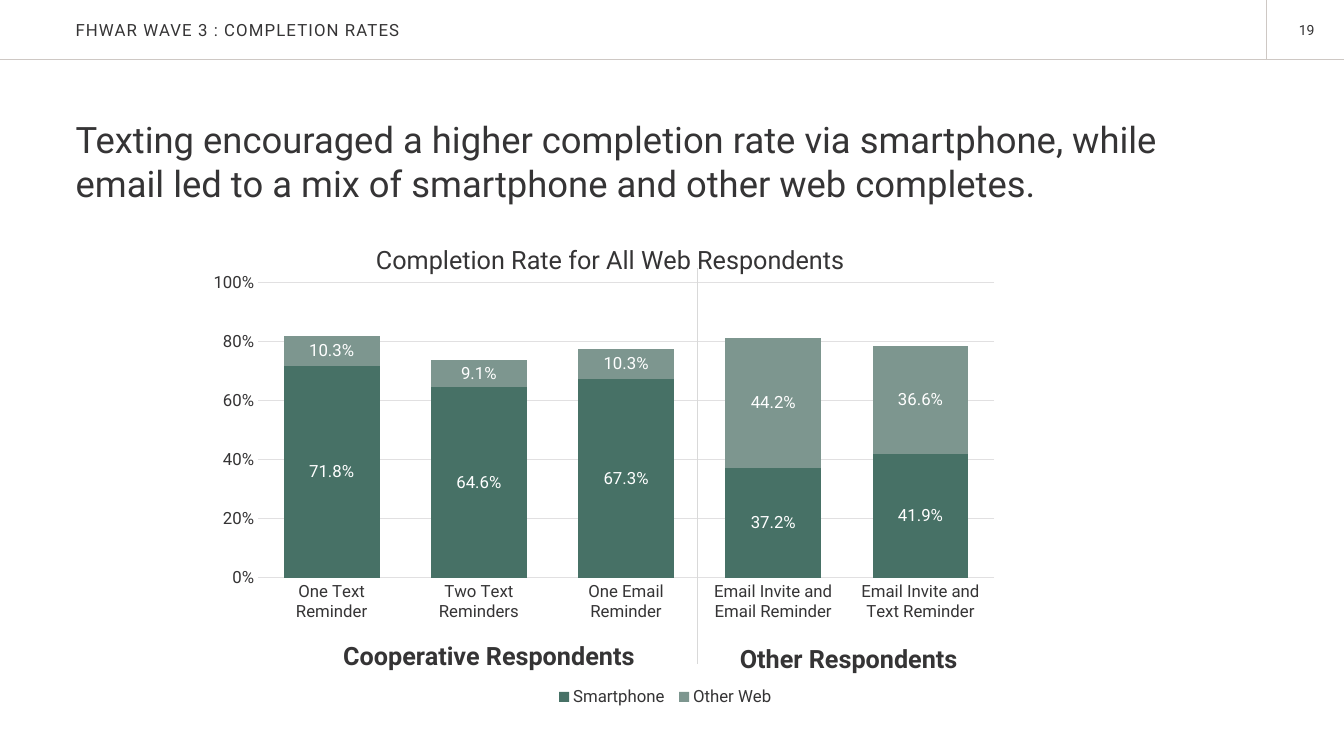
from lxml.etree import SubElement
from pptx import Presentation
from pptx.chart.data import CategoryChartData
from pptx.dml.color import RGBColor
from pptx.enum.chart import XL_CHART_TYPE as ChartType
from pptx.enum.chart import XL_LEGEND_POSITION as LegendPosition
from pptx.enum.chart import XL_TICK_MARK as TickMark
from pptx.enum.shapes import MSO_CONNECTOR as Connector
from pptx.enum.text import MSO_ANCHOR as Anchor
from pptx.enum.text import PP_ALIGN as Align
from pptx.oxml.ns import qn
from pptx.util import Pt

FONT = "Roboto"
INK = RGBColor(0x35, 0x34, 0x35)
WHITE = RGBColor(0xFF, 0xFF, 0xFF)
FRAME_LINE = RGBColor(0xCE, 0xC8, 0xC4)
GRID_LINE = RGBColor(0xE1, 0xE0, 0xE1)
DIVIDER_LINE = RGBColor(0xD9, 0xD9, 0xD9)
DARK_GREEN = RGBColor(0x47, 0x71, 0x66)
SAGE = RGBColor(0x7D, 0x96, 0x8F)

SLIDE_WIDTH, SLIDE_HEIGHT = 960, 540
HEADER_HEIGHT = 42.5
PAGE_NUMBER_LEFT = 904.5

CATEGORIES = [
    "One Text Reminder",
    "Two Text Reminders",
    "One Email Reminder",
    "Email Invite and\nEmail Reminder",
    "Email Invite and\nText Reminder",
]
SERIES = [
    ("Smartphone", DARK_GREEN, (0.718, 0.646, 0.673, 0.372, 0.419)),
    ("Other Web", SAGE, (0.103, 0.091, 0.103, 0.442, 0.366)),
]


def style_font(font, size, color=INK, bold=False):
    font.name = FONT
    font.size = Pt(size)
    font.bold = bold
    font.color.rgb = color


def style_line(line, color, width):
    line.color.rgb = color
    line.width = Pt(width)


def add_text(slide, text, box, size, align=Align.LEFT, bold=False,
             inset=True, anchor=Anchor.TOP, spacing=None):
    shape = slide.shapes.add_textbox(*(Pt(length) for length in box))
    frame = shape.text_frame
    frame.word_wrap = True
    frame.vertical_anchor = anchor
    if not inset:
        frame.margin_left = frame.margin_right = 0
        frame.margin_top = frame.margin_bottom = 0
    paragraph = frame.paragraphs[0]
    paragraph.alignment = align
    run = paragraph.add_run()
    run.text = text
    style_font(paragraph.font, size, bold=bold)
    if spacing:
        run.font._element.set("spc", str(spacing))


def add_line(slide, start, end, color, width):
    points = [Pt(length) for length in (*start, *end)]
    connector = slide.shapes.add_connector(Connector.STRAIGHT, *points)
    style_line(connector.line, color, width)
    SubElement(connector._element.spPr, qn("a:effectLst"))


def place(element, inner=False, **fractions):
    """Give a chart part a manual layout in fractions of the chart."""
    for old_layout in element.findall(qn("c:layout")):
        element.remove(old_layout)
    layout = SubElement(element, qn("c:layout"))
    manual = SubElement(layout, qn("c:manualLayout"))
    if inner:
        SubElement(manual, qn("c:layoutTarget")).set("val", "inner")
    for side in ("x", "y"):
        SubElement(manual, qn(f"c:{side}Mode")).set("val", "edge")
    for side, fraction in fractions.items():
        SubElement(manual, qn(f"c:{side}")).set("val", str(fraction))
    overlay = element.find(qn("c:overlay"))
    if overlay is None:
        element.insert(0, layout)
    else:
        overlay.addprevious(layout)


def style_axes(chart):
    for axis in (chart.category_axis, chart.value_axis):
        axis.major_tick_mark = axis.minor_tick_mark = TickMark.NONE
        style_font(axis.tick_labels.font, 12)
    style_line(chart.category_axis.format.line, GRID_LINE, 0.75)
    values = chart.value_axis
    values.minimum_scale, values.maximum_scale = 0, 1
    values.major_unit = 0.2
    values.tick_labels.number_format = "0%"
    values.tick_labels.number_format_is_linked = False
    values.format.line.fill.background()
    style_line(values.major_gridlines.format.line, GRID_LINE, 0.75)


def style_series(series, color):
    series.format.fill.solid()
    series.format.fill.fore_color.rgb = color
    labels = series.data_labels
    labels.show_value = True
    labels.number_format = "0.0%"
    labels.number_format_is_linked = False
    style_font(labels.font, 12, WHITE)


def add_completion_chart(slide, box):
    data = CategoryChartData(number_format="0.0%")
    data.categories = CATEGORIES
    for name, _, values in SERIES:
        data.add_series(name, values)
    lengths = [Pt(length) for length in box]
    chart = slide.shapes.add_chart(
        ChartType.COLUMN_STACKED, *lengths, data).chart
    style_font(chart.font, 10)

    # Columns
    plot = chart.plots[0]
    plot.gap_width, plot.overlap = 54, 100
    plot.vary_by_categories = False
    for series, (_, color, _) in zip(plot.series, SERIES):
        style_series(series, color)
    style_axes(chart)

    # Title and legend
    chart.has_title = True
    title = chart.chart_title
    title.text_frame.text = "Completion Rate for All Web Respondents"
    style_font(title.text_frame.paragraphs[0].font, 18)
    chart.has_legend = True
    chart.legend.position = LegendPosition.BOTTOM
    chart.legend.include_in_layout = False
    style_font(chart.legend.font, 12)

    # Positions within the chart
    plot_area = chart._chartSpace.chart.plotArea
    place(plot_area, inner=True, x=0.077, y=0.128, w=0.864, h=0.593)
    place(title._element, x=0.21, y=0.04)
    place(chart.legend._element, x=0.42, y=0.93, w=0.27, h=0.06)


def main():
    presentation = Presentation()
    presentation.slide_width = Pt(SLIDE_WIDTH)
    presentation.slide_height = Pt(SLIDE_HEIGHT)
    slide = presentation.slides.add_slide(presentation.slide_layouts[6])

    # Header
    add_text(slide, "19", (910, 11.5, 36, 19.5), 10, Align.RIGHT)
    add_line(slide, (0, HEADER_HEIGHT), (SLIDE_WIDTH, HEADER_HEIGHT),
             FRAME_LINE, 0.65)
    add_line(slide, (PAGE_NUMBER_LEFT, 0), (PAGE_NUMBER_LEFT, HEADER_HEIGHT),
             FRAME_LINE, 0.65)
    add_text(slide, "FHWAR WAVE 3 : COMPLETION RATES", (54, 0, 590, 43), 12,
             inset=False, anchor=Anchor.MIDDLE, spacing=80)

    # Main message
    add_text(slide, "Texting encouraged a higher completion rate via "
             "smartphone, while email led to a mix of smartphone and other "
             "web completes.", (54, 84, 834.5, 72), 26, inset=False)

    # Chart with its two respondent groups
    add_completion_chart(slide, (137.5, 156.5, 608.5, 355.5))
    add_line(slide, (498, 191.5), (498, 474.5), DIVIDER_LINE, 0.5)
    for group, left, top in (("Cooperative Respondents", 194.5, 453.5),
                             ("Other Respondents", 451.5, 456)):
        add_text(slide, group, (left, top, 309.5, 40), 18, Align.CENTER,
                 bold=True)

    presentation.save("out.pptx")


if __name__ == "__main__":
    main()
